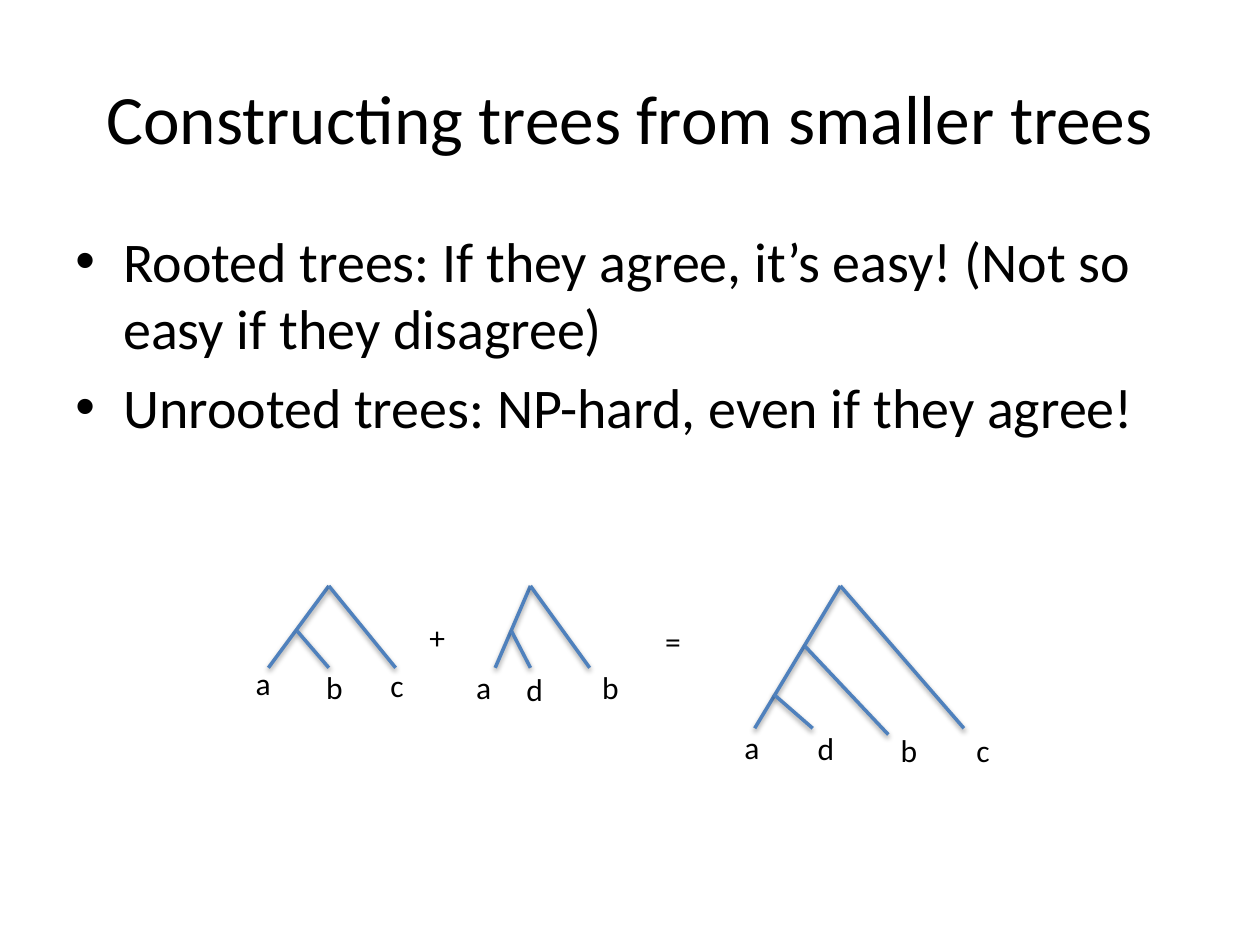
from lxml.etree import SubElement
from pptx import Presentation
from pptx.dml.color import RGBColor
from pptx.enum.shapes import MSO_CONNECTOR
from pptx.enum.text import MSO_ANCHOR, MSO_AUTO_SIZE, PP_ALIGN
from pptx.oxml.ns import qn
from pptx.util import Inches, Pt

FONT = "Calibri"
BLACK = "000000"
BRANCH_BLUE = "4F81BD"
APEX_TOP = 4.65

# Branches (x1, y1, x2, y2) and leaf labels (x, y) are measured from the apex.
TREES = [
    {"apex": 2.61,
     "branches": [(0, 0, -0.48, 0.65), (-0.25, 0.36, 0, 0.65), (0, 0, 0.53, 0.65)],
     "leaves": [("a", -0.68, 0.57), ("b", -0.12, 0.6), ("c", 0.39, 0.59)]},
    {"apex": 4.21,
     "branches": [(0, 0, -0.28, 0.65), (0, 0, 0.47, 0.65), (-0.15, 0.36, 0, 0.65)],
     "leaves": [("a", -0.53, 0.6), ("b", 0.47, 0.6), ("d", -0.13, 0.62)]},
    {"apex": 6.67,
     "branches": [(0, 0, -0.68, 1.13), (-0.53, 0.86, -0.22, 1.13),
                  (0, 0, 0.98, 1.13), (-0.28, 0.48, 0.38, 1.18)],
     "leaves": [("a", -0.86, 1.08), ("d", -0.28, 1.09),
                ("b", 0.38, 1.1), ("c", 0.98, 1.1)]},
]
OPERATORS = [("+", 3.31, 4.86), ("=", 5.18, 4.89)]


def color(hex_value):
    return RGBColor.from_string(hex_value)


def add_text(slide, box, paragraphs, size, wrap=True):
    frame = slide.shapes.add_textbox(*map(Inches, box)).text_frame
    frame.word_wrap = wrap
    frame.text = "\n".join(paragraphs)
    for paragraph in frame.paragraphs:
        font = paragraph.runs[0].font
        for name, value in {"name": FONT, "size": Pt(size)}.items():
            setattr(font, name, value)
        font.color.rgb = color(BLACK)
    return frame


def add_title(slide, box, text):
    frame = add_text(slide, box, [text], 39.6)
    frame.vertical_anchor = MSO_ANCHOR.MIDDLE
    frame.paragraphs[0].alignment = PP_ALIGN.CENTER


def add_bullets(slide, box, items):
    for paragraph in add_text(slide, box, items, 32).paragraphs:
        paragraph.space_before = Pt(6.4)
        properties = paragraph._p.get_or_add_pPr()
        properties.set("marL", str(Inches(0.38)))
        properties.set("indent", str(-Inches(0.38)))
        SubElement(properties, qn("a:buFont"), typeface="Arial")
        SubElement(properties, qn("a:buChar"), char="•")


def add_label(slide, text, left, top):
    frame = add_text(slide, (left, top, 0.33, 0.4), [text], 18, wrap=False)
    frame.auto_size = MSO_AUTO_SIZE.SHAPE_TO_FIT_TEXT


def add_branch(slide, x1, y1, x2, y2):
    branch = slide.shapes.add_connector(
        MSO_CONNECTOR.STRAIGHT, *map(Inches, (x1, y1, x2, y2)))
    branch.line.color.rgb = color(BRANCH_BLUE)
    branch.line.width = Pt(2)
    effects = SubElement(branch._element.spPr, qn("a:effectLst"))
    shadow = SubElement(effects, qn("a:outerShdw"), blurRad=str(Pt(3.1)),
                        dist=str(Pt(1.6)), dir="5400000", rotWithShape="0")
    shade = SubElement(shadow, qn("a:srgbClr"), val=BLACK)
    SubElement(shade, qn("a:alpha"), val="38000")


def add_tree(slide, left, top, branches, leaves):
    """Draw a rooted tree whose apex is at (left, top)."""
    for x1, y1, x2, y2 in branches:
        add_branch(slide, left + x1, top + y1, left + x2, top + y2)
    for name, x, y in leaves:
        add_label(slide, name, left + x, top + y)


def main():
    prs = Presentation()
    prs.slide_width, prs.slide_height = Inches(10), Inches(7.5)
    slide = prs.slides.add_slide(prs.slide_layouts[6])
    add_title(slide, (0.5, 0.3, 9, 1.25), "Constructing trees from smaller trees")
    add_bullets(slide, (0.5, 1.75, 9, 4.95), [
        "Rooted trees: If they agree, it’s easy! (Not so easy if they disagree)",
        "Unrooted trees: NP-hard, even if they agree!",
    ])
    for tree in TREES:
        add_tree(slide, tree["apex"], APEX_TOP, tree["branches"], tree["leaves"])
    for operator in OPERATORS:
        add_label(slide, *operator)
    prs.save("out.pptx")


if __name__ == "__main__":
    main()
